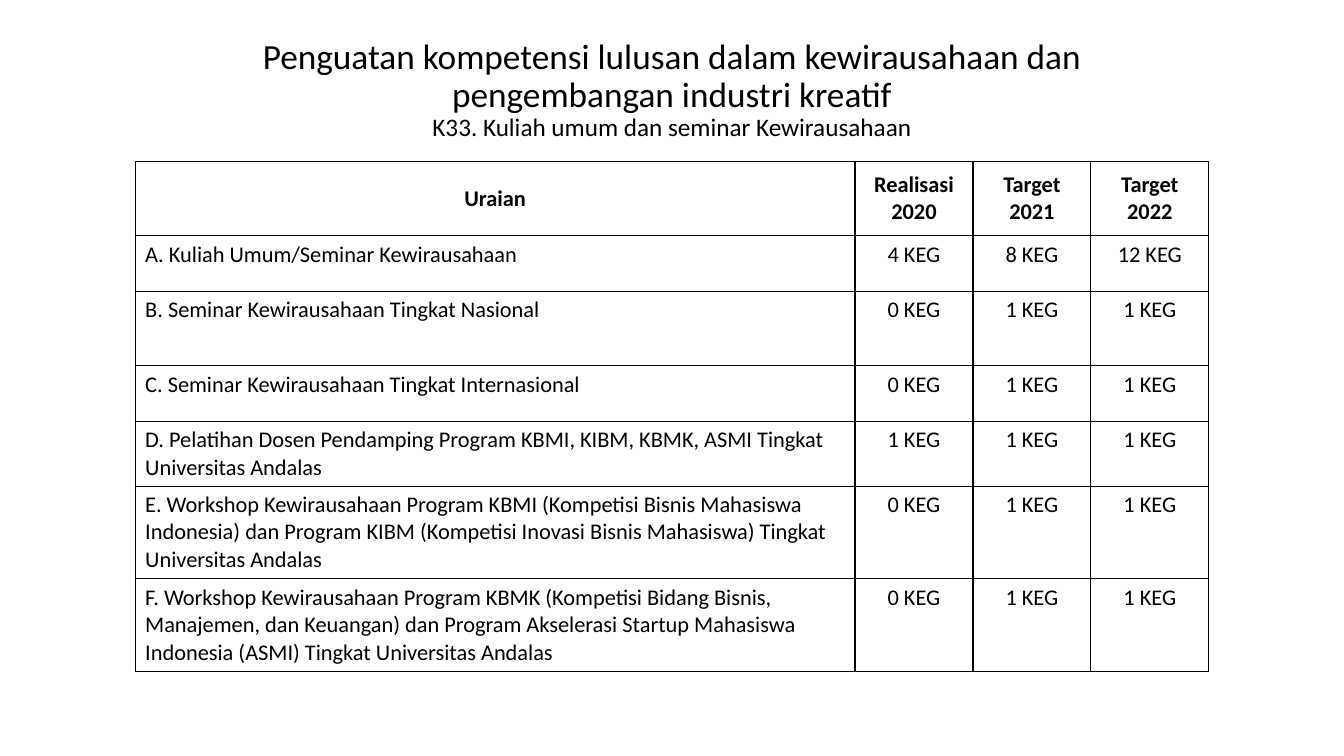
import pptx
import pptx.util
import pptx.dml.color
import pptx.enum.text
import pptx.oxml
import pptx.oxml.ns

Inches, Pt = pptx.util.Inches, pptx.util.Pt
RGBColor = pptx.dml.color.RGBColor
PP_ALIGN = pptx.enum.text.PP_ALIGN
MSO_ANCHOR = pptx.enum.text.MSO_ANCHOR

COLORS = {"text": "000000", "border": "000000", "cell": "FFFFFF"}


def style_font(font, size, bold=False):
    formats = {"name": "Calibri", "size": Pt(size), "bold": bold}
    for key, value in formats.items():
        setattr(font, key, value)
    font.color.rgb = RGBColor.from_string(COLORS["text"])


def add_borders(cell):
    tcPr = cell._tc.get_or_add_tcPr()
    for i, side in enumerate(("lnL", "lnR", "lnT", "lnB")):
        tcPr.insert(i, pptx.oxml.parse_xml(
            f'<a:{side} {pptx.oxml.ns.nsdecls("a")} w="{Pt(1)}">'
            f'<a:solidFill><a:srgbClr val="{COLORS["border"]}"/></a:solidFill>'
            f'</a:{side}>'))


prs = pptx.Presentation()
prs.slide_width, prs.slide_height = Inches(13.33), Inches(7.5)
s = prs.slides.add_slide(prs.slide_layouts[5])

title = s.shapes.title
box = {"left": 1.38, "top": 0.36, "width": 10.57, "height": 1.08}
for key, value in box.items():
    setattr(title, key, Inches(value))
tf = title.text_frame
tf.word_wrap = True
tf.auto_size = pptx.enum.text.MSO_AUTO_SIZE.NONE
tf.vertical_anchor = MSO_ANCHOR.MIDDLE
p = tf.paragraphs[0]
p.alignment = PP_ALIGN.CENTER
p.line_spacing = 0.9
r = p.add_run()
r.text = "Penguatan kompetensi lulusan dalam kewirausahaan dan pengembangan industri kreatif"
style_font(r.font, 25.2)
p.add_line_break()
r = p.add_run()
r.text = "K33. Kuliah umum dan seminar Kewirausahaan"
style_font(r.font, 18)

rows = [
    ("Uraian", "Realisasi\n2020", "Target\n2021", "Target\n2022"),
    ("A. Kuliah Umum/Seminar Kewirausahaan", "4 KEG", "8 KEG", "12 KEG"),
    ("B. Seminar Kewirausahaan Tingkat Nasional", "0 KEG", "1 KEG", "1 KEG"),
    ("C. Seminar Kewirausahaan Tingkat Internasional", "0 KEG", "1 KEG", "1 KEG"),
    ("D. Pelatihan Dosen Pendamping Program KBMI, KIBM, KBMK, ASMI Tingkat "
     "Universitas Andalas", "1 KEG", "1 KEG", "1 KEG"),
    ("E. Workshop Kewirausahaan Program KBMI (Kompetisi Bisnis Mahasiswa Indonesia) "
     "dan Program KIBM (Kompetisi Inovasi Bisnis Mahasiswa) Tingkat Universitas Andalas",
     "0 KEG", "1 KEG", "1 KEG"),
    ("F. Workshop Kewirausahaan Program KBMK (Kompetisi Bidang Bisnis, Manajemen, "
     "dan Keuangan) dan Program Akselerasi Startup Mahasiswa Indonesia (ASMI) "
     "Tingkat Universitas Andalas", "0 KEG", "1 KEG", "1 KEG"),
]
col_widths = [7.14, 1.17, 1.17, 1.17]
row_heights = [0.74, 0.55, 0.74, 0.55, 0.64, 0.92, 0.91]

table = s.shapes.add_table(
    len(rows), len(col_widths), Inches(1.34), Inches(1.6),
    Inches(sum(col_widths)), Inches(sum(row_heights))).table
for column, width in zip(table.columns, col_widths):
    column.width = Inches(width)
for row, height in zip(table.rows, row_heights):
    row.height = Inches(height)

for i, texts in enumerate(rows):
    header = i == 0
    for j, text in enumerate(texts):
        cell = table.cell(i, j)
        cell.text = text
        cell.vertical_anchor = MSO_ANCHOR.MIDDLE if header else MSO_ANCHOR.TOP
        cell.fill.solid()
        cell.fill.fore_color.rgb = RGBColor.from_string(COLORS["cell"])
        add_borders(cell)
        for p in cell.text_frame.paragraphs:
            p.alignment = PP_ALIGN.CENTER if header or j else PP_ALIGN.LEFT
            for r in p.runs:
                style_font(r.font, 16, header)

prs.save("out.pptx")
